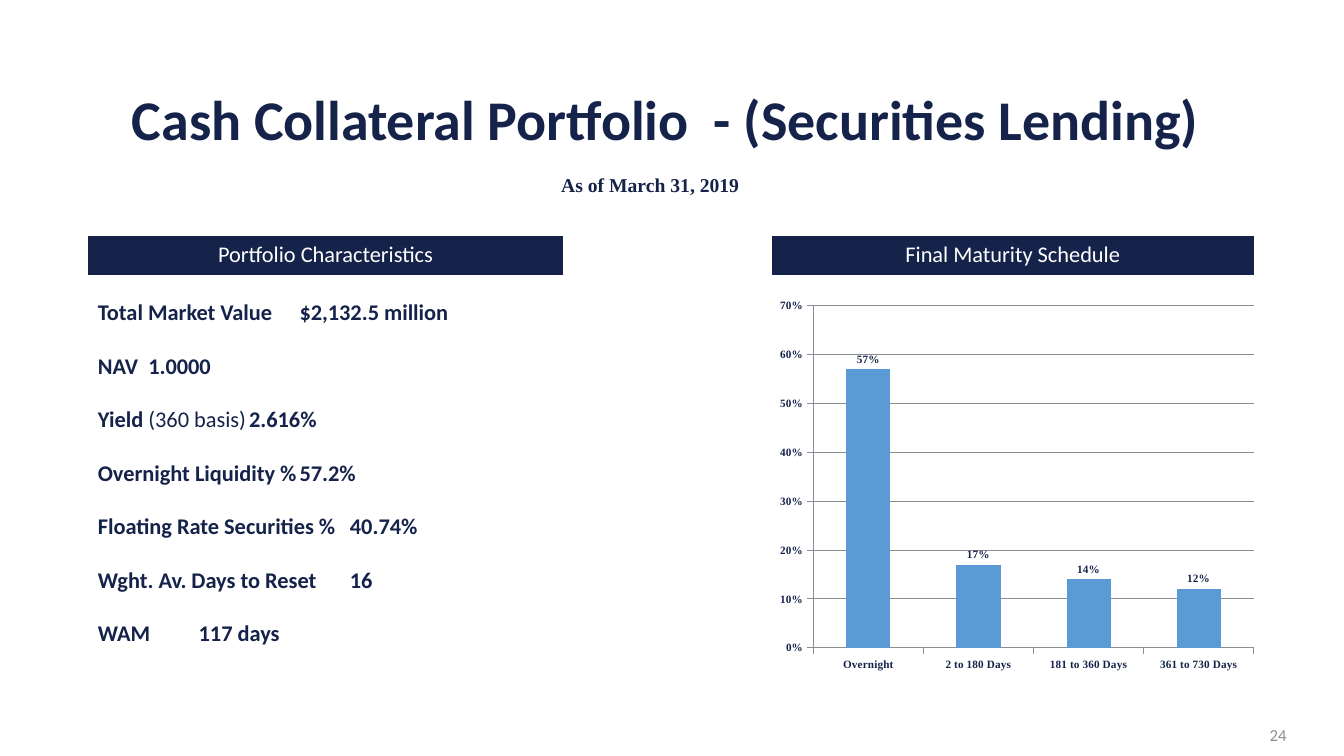
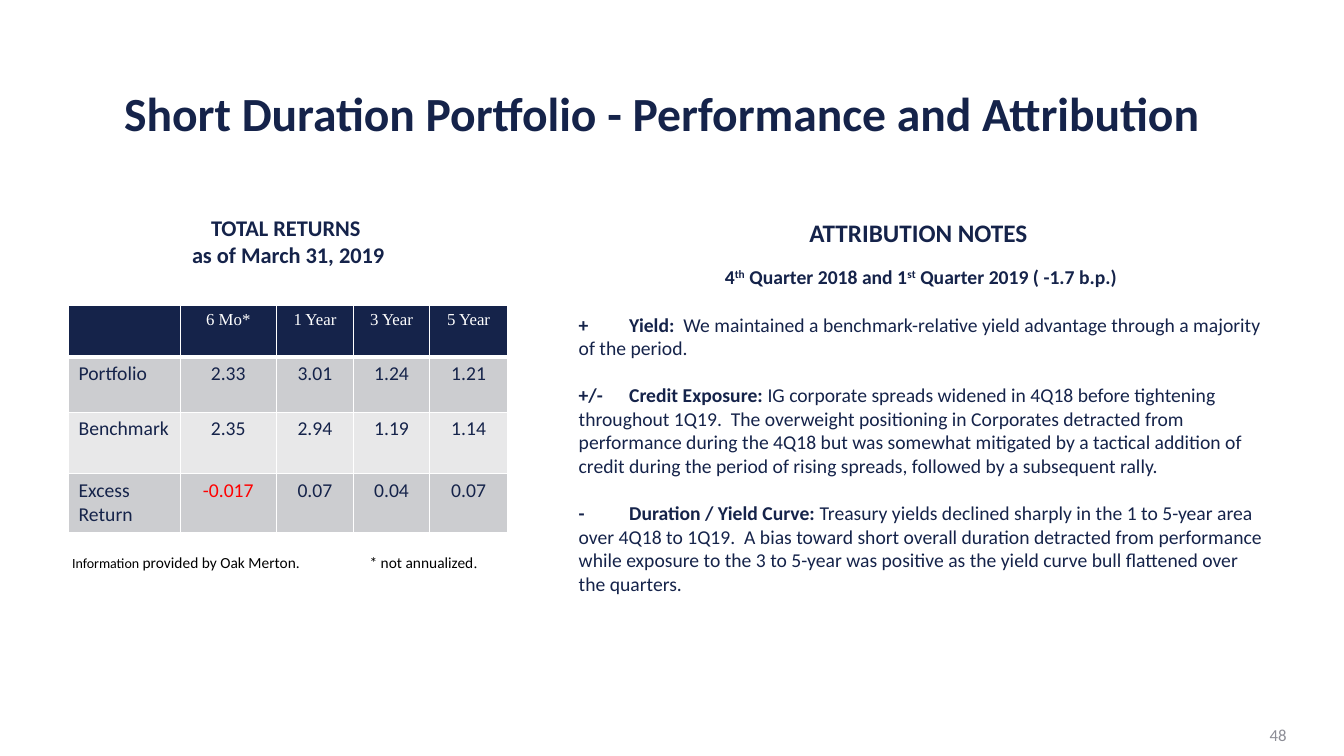
from collections import namedtuple

from lxml.etree import SubElement
from pptx import Presentation
from pptx.chart.data import CategoryChartData
from pptx.dml.color import RGBColor
from pptx.enum.chart import XL_CHART_TYPE, XL_LABEL_POSITION, XL_TICK_MARK
from pptx.enum.text import MSO_ANCHOR, MSO_AUTO_SIZE, PP_ALIGN
from pptx.oxml import parse_xml
from pptx.oxml.ns import nsdecls, qn
from pptx.util import Inches, Pt

NAVY = RGBColor(0x15, 0x23, 0x4A)
WHITE = RGBColor(0xFF, 0xFF, 0xFF)
BLACK = RGBColor(0, 0, 0)
RED = RGBColor(0xFF, 0, 0)
GREY = RGBColor(0x8C, 0x8D, 0x96)
BAR_BLUE = RGBColor(0x5B, 0x9B, 0xD5)
BAND_DARK = RGBColor(0xCC, 0xCD, 0xD0)
BAND_LIGHT = RGBColor(0xE8, 0xE8, 0xE9)

SANS, SERIF = "Calibri", "Times New Roman"
LEFT, CENTER, RIGHT = PP_ALIGN.LEFT, PP_ALIGN.CENTER, PP_ALIGN.RIGHT


def style(size, color=NAVY, name=SANS, bold=False):
    return {"size": Pt(size), "name": name, "bold": bold, "color": color}


HEADER = style(16, WHITE)
HEADING = style(16, bold=True)
BODY = style(14)
BODY_BOLD = style(14, bold=True)
AXIS = style(8, name=SERIF, bold=True)
PLAIN, SUPER = {}, {"baseline": "30000"}


class Box(namedtuple("Box", "left top width height")):
    def inner(self, left, top, width, height):
        """Return an inner box, given in percent of this one."""
        return Box(int(self.left + self.width * left / 100),
                   int(self.top + self.height * top / 100),
                   int(self.width * width / 100),
                   int(self.height * height / 100))


PAGE = Box(0, 0, Inches(13.33), Inches(7.5))


def apply_font(font, values):
    for name, value in values.items():
        if name == "color":
            font.color.rgb = value
        else:
            setattr(font, name, value)


def write(para, spans, values, align=LEFT):
    """Fill a paragraph with (text, changes) spans on top of a base style."""
    para.alignment = align
    for text, changes in spans:
        span = para.add_run()
        span.text = text
        merged = {**values, **changes}
        baseline = merged.pop("baseline", None)
        apply_font(span.font, merged)
        if baseline:
            span.font._element.set("baseline", baseline)


def add_text(page, box, lines, values, align=CENTER, anchor=MSO_ANCHOR.TOP, margin=0.1):
    frame = page.shapes.add_textbox(*box).text_frame
    frame.word_wrap = True
    frame.vertical_anchor = anchor
    frame.margin_left = frame.margin_right = Inches(margin)
    for index, spans in enumerate(lines):
        para = frame.add_paragraph() if index else frame.paragraphs[0]
        write(para, spans, values, align)


def place(shape, box):
    for name, value in box._asdict().items():
        setattr(shape, name, value)


def start_page(deck, title, size, title_box, number):
    page = deck.slides.add_slide(deck.slide_layouts[1])
    place(page.shapes.title, title_box)
    frame = page.shapes.title.text_frame
    frame.auto_size = MSO_AUTO_SIZE.NONE
    frame.vertical_anchor = MSO_ANCHOR.MIDDLE
    para = frame.paragraphs[0]
    para.line_spacing = 0.9
    write(para, [(title, PLAIN)], style(size, bold=True), CENTER)
    add_text(page, PAGE.inner(73.97, 94.53, 22.5, 5.33), [[(number, PLAIN)]],
             style(12, GREY), RIGHT, MSO_ANCHOR.MIDDLE)
    return page


def fill_body(page, box, items, values, gap):
    """Fill the body placeholder with (spans, tab stop in inches, alignment) items."""
    body = page.placeholders[1]
    place(body, box)
    frame = body.text_frame
    frame.auto_size = MSO_AUTO_SIZE.NONE
    frame.word_wrap = True
    frame.margin_right = Inches(0.05)
    for index, (spans, tab, align) in enumerate(items):
        para = frame.add_paragraph() if index else frame.paragraphs[0]
        para.space_before = Pt(gap if index else 0)
        props = para._p.get_or_add_pPr()
        props.set("marL", "0")
        props.set("indent", "0")
        SubElement(props, qn("a:buNone"))
        if tab:
            stops = SubElement(props, qn("a:tabLst"))
            SubElement(stops, qn("a:tab"), pos=str(Inches(tab)), algn="l")
        write(para, spans, values, align)


def fill_cell(cell, text, values, fill, align=CENTER, bottom=1):
    props = cell._tc.get_or_add_tcPr()
    for side, points in {"L": 1, "R": 1, "T": 1, "B": bottom}.items():
        props.append(parse_xml(
            f'<a:ln{side} {nsdecls("a")} w="{Pt(points)}"><a:solidFill>'
            f'<a:srgbClr val="{WHITE}"/></a:solidFill></a:ln{side}>'))
    cell.fill.solid()
    cell.fill.fore_color.rgb = fill
    if text:
        write(cell.text_frame.paragraphs[0], [(text, PLAIN)], values, align)


def add_header(page, box, text):
    table = page.shapes.add_table(1, 1, *box).table
    fill_cell(table.cell(0, 0), text, HEADER, NAVY, bottom=3)


def add_characteristics(page, box):
    add_header(page, box.inner(0, 0, 100, 8.84), "Portfolio Characteristics")
    facts = [
        ("Total Market Value", "", "$2,132.5 million"),
        ("NAV", "", "1.0000"),
        ("Yield ", "(360 basis)", "2.616%"),
        ("Overnight Liquidity %", "", "57.2%"),
        ("Floating Rate Securities %", "", "40.74%"),
        ("Wght. Av. Days to Reset", "", "16"),
        ("WAM", "", "117 days"),
    ]
    items = []
    for label, remark, value in facts:
        spans = [(label, PLAIN), (remark, {"bold": False}), ("\t" + value, PLAIN)]
        items.append(([span for span in spans if span[0]], 3, LEFT))
    fill_body(page, box.inner(0, 12.28, 100, 87.72), items, HEADING, 19)


def add_maturity_chart(page, box):
    add_header(page, box.inner(0, 0, 100, 8.84), "Final Maturity Schedule")
    data = CategoryChartData(number_format="0%")
    data.categories = ["Overnight", "2 to 180 Days", "181 to 360 Days", "361 to 730 Days"]
    data.add_series("Series 1", [0.57, 0.17, 0.14, 0.12])
    chart = page.shapes.add_chart(XL_CHART_TYPE.COLUMN_CLUSTERED,
                                  *box.inner(-4.59, 12.28, 104.59, 87.72), data).chart
    chart.has_legend = chart.has_title = False
    apply_font(chart.font, style(18))

    values = chart.value_axis
    values.minimum_scale, values.maximum_scale, values.major_unit = 0, 0.7, 0.1
    values.tick_labels.number_format = "0%"
    values.tick_labels.number_format_is_linked = False
    for axis in (values, chart.category_axis):
        axis.major_tick_mark = XL_TICK_MARK.OUTSIDE
        apply_font(axis.tick_labels.font, AXIS)
    for lines in (values, chart.category_axis, values.major_gridlines):
        lines.format.line.color.rgb = GREY
        lines.format.line.width = Pt(0.5)

    plot = chart.plots[0]
    plot.gap_width = 150
    plot.vary_by_categories = False
    bars = plot.series[0].format.fill
    bars.solid()
    bars.fore_color.rgb = BAR_BLUE
    plot.has_data_labels = True
    labels = plot.data_labels
    labels.show_value = True
    labels.number_format = "0%"
    labels.number_format_is_linked = False
    labels.position = XL_LABEL_POSITION.OUTSIDE_END
    apply_font(labels.font, AXIS)

    area = chart._chartSpace.chart.plotArea
    for old in area.findall(qn("c:layout")):
        area.remove(old)
    layout = parse_xml(f'<c:layout {nsdecls("c")}/>')
    manual = SubElement(layout, qn("c:manualLayout"))
    for tag, value in {"layoutTarget": "inner", "xMode": "edge", "yMode": "edge",
                       "x": "0.127", "y": "0.03", "w": "0.873", "h": "0.834"}.items():
        SubElement(manual, qn("c:" + tag), val=value)
    area.insert(0, layout)


def add_returns_table(page, box):
    rows = [
        ["", "6 Mo*", "1 Year", "3 Year", "5 Year"],
        ["Portfolio", "2.33", "3.01", "1.24", "1.21"],
        ["Benchmark", "2.35", "2.94", "1.19", "1.14"],
        ["Excess Return", "-0.017", "0.07", "0.04", "0.07"],
    ]
    widths, heights = [1.11, 0.95, 0.77, 0.75, 0.78], [0.51, 0.55, 0.61, 0.58]
    table = page.shapes.add_table(len(rows), len(widths), *box).table
    for column, share in zip(table.columns, widths):
        column.width = int(box.width * share / sum(widths))
    for row, share in zip(table.rows, heights):
        row.height = int(box.height * share / sum(heights))
    for r, texts in enumerate(rows):
        for c, text in enumerate(texts):
            cell = table.cell(r, c)
            if r == 0:
                fill_cell(cell, text, style(12, WHITE, SERIF), NAVY, bottom=3)
                continue
            color = RED if text.startswith("-") else NAVY
            fill_cell(cell, text, style(14, color), BAND_DARK if r % 2 else BAND_LIGHT,
                      CENTER if c else LEFT)


def add_total_returns(page, box):
    add_text(page, box.inner(0, 0, 100, 17.53),
             [[("TOTAL RETURNS ", PLAIN)], [("as of March 31, 2019", PLAIN)]], HEADING)
    add_returns_table(page, box.inner(0, 26.03, 100, 61.64))
    footnote = style(11, BLACK)
    add_text(page, box.inner(0, 92.05, 53.5, 7.95),
             [[("Information", {"size": Pt(10)}), (" provided by Oak Merton.", PLAIN)]],
             footnote, margin=0)
    add_text(page, box.inner(61.5, 92.05, 38.5, 7.95),
             [[("* not annualized", PLAIN), (".", {"name": SERIF})]], footnote, margin=0)


def add_attribution_notes(page, box):
    add_text(page, box.inner(0, 0, 100, 10.34), [[("ATTRIBUTION NOTES", PLAIN)]],
             style(18, bold=True))
    quarters = [("4", PLAIN), ("th", SUPER), (" Quarter 2018 and 1", PLAIN), ("st", SUPER),
                (" Quarter 2019 ( -1.7 b.p.)", PLAIN)]
    notes = [
        ("+", 0.22, "Yield:  ",
         "We maintained a benchmark-relative yield advantage through a majority of the period."),
        ("+/-", 0.41, "Credit Exposure: ",
         "IG corporate spreads widened in 4Q18 before tightening throughout 1Q19.  The "
         "overweight positioning in Corporates detracted from performance during the 4Q18 but "
         "was somewhat mitigated by a tactical addition of credit during the period of rising "
         "spreads, followed by a subsequent rally."),
        ("-", 0.23, "Duration / Yield Curve: ",
         "Treasury yields declined sharply in the 1 to 5-year area over 4Q18 to 1Q19.  A bias "
         "toward short overall duration detracted from performance while exposure to the 3 to "
         "5-year was positive as the yield curve bull flattened over the quarters."),
    ]
    items = [(quarters, None, CENTER)]
    for sign, tab, topic, text in notes:
        items.append(([(f"{sign}\t{topic}", PLAIN), (text, BODY)], tab, LEFT))
    fill_body(page, box.inner(0, 12.14, 100, 87.86), items, BODY_BOLD, 17)


def build_collateral_page(deck):
    page = start_page(deck, "Cash Collateral Portfolio  - (Securities Lending)", 40,
                      PAGE.inner(5.7, 12.27, 87.6, 7.73), "24")
    add_text(page, PAGE.inner(37.43, 22.27, 21.9, 4.53), [[("As of March 31, 2019", PLAIN)]],
             style(14, name=SERIF, bold=True))
    add_characteristics(page, PAGE.inner(6.53, 31.2, 35.4, 61.87))
    add_maturity_chart(page, PAGE.inner(57.39, 31.2, 35.93, 61.87))


def build_performance_page(deck):
    page = start_page(deck, "Short Duration Portfolio - Performance and Attribution", 34,
                      PAGE.inner(5.1, 12, 88.3, 6.67), "48")
    add_total_returns(page, PAGE.inner(5.1, 27.73, 32.7, 48.67))
    add_attribution_notes(page, PAGE.inner(42.31, 28.13, 52.06, 51.6))


def main():
    deck = Presentation()
    deck.slide_width, deck.slide_height = PAGE.width, PAGE.height
    build_collateral_page(deck)
    build_performance_page(deck)
    deck.save("out.pptx")


if __name__ == "__main__":
    main()
